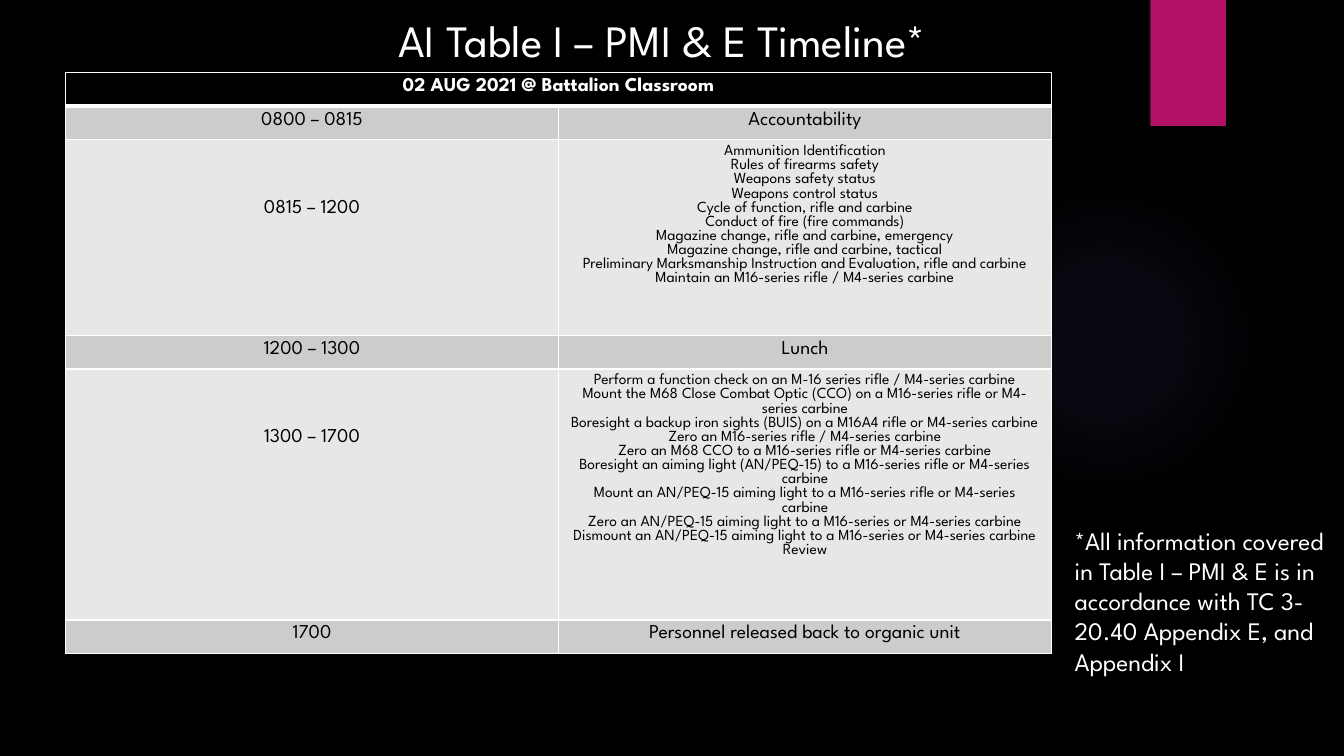
from lxml.etree import SubElement
from pptx import Presentation
from pptx.dml.color import RGBColor
from pptx.enum.shapes import MSO_SHAPE
from pptx.enum.text import MSO_AUTO_SIZE, PP_ALIGN
from pptx.oxml import parse_xml
from pptx.oxml.ns import qn
from pptx.util import Inches, Pt

FONT = "League Spartan"
BLACK = RGBColor(0x00, 0x00, 0x00)
WHITE = RGBColor(0xFF, 0xFF, 0xFF)
PINK = RGBColor(0xB3, 0x11, 0x66)
VIOLET = RGBColor(0x9B, 0x6B, 0xF2)
DARK = RGBColor(0xCC, 0xCC, 0xCC)
LIGHT = RGBColor(0xE7, 0xE7, 0xE7)

HEADER = "02 AUG 2021 @ Battalion Classroom"
MORNING = [
    "Ammunition Identification",
    "Rules of firearms safety",
    "Weapons safety status",
    "Weapons control status",
    "Cycle of function, rifle and carbine",
    "Conduct of fire (fire commands)",
    "Magazine change, rifle and carbine, emergency",
    "Magazine change, rifle and carbine, tactical",
    "Preliminary Marksmanship Instruction and Evaluation, rifle and carbine",
    "Maintain an M16-series rifle / M4-series carbine",
]
EVENING = [
    "Perform a function check on an M-16 series rifle / M4-series carbine",
    "Mount the M68 Close Combat Optic (CCO) on a M16-series rifle or M4-series carbine",
    "Boresight a backup iron sights (BUIS) on a M16A4 rifle or M4-series carbine",
    "Zero an M16-series rifle / M4-series carbine",
    "Zero an M68 CCO to a M16-series rifle or M4-series carbine",
    "Boresight an aiming light (AN/PEQ-15) to a M16-series rifle or M4-series carbine",
    "Mount an AN/PEQ-15 aiming light to a M16-series rifle or M4-series carbine",
    "Zero an AN/PEQ-15 aiming light to a M16-series or M4-series carbine",
    "Dismount an AN/PEQ-15 aiming light to a M16-series or M4-series carbine",
    "Review",
]
# Time, tasks, row height
PLAN = [
    ("0800 – 0815", ["Accountability"], 0.33),
    ("0815 – 1200", MORNING, 1.94),
    ("1200 – 1300", ["Lunch"], 0.33),
    ("1300 – 1700", EVENING, 2.49),
    ("1700", ["Personnel released back to organic unit"], 0.33),
]


def write(frame, lines, size, color, align, bold=False):
    look = {"name": FONT, "size": Pt(size), "bold": bold}
    for i, line in enumerate(lines):
        para = frame.paragraphs[0] if i == 0 else frame.add_paragraph()
        para.alignment = align
        run = para.add_run()
        run.text = line
        for key, value in look.items():
            setattr(run.font, key, value)
        run.font.color.rgb = color


def add_text(slide, box, text, size, align, wrap):
    shape = slide.shapes.add_textbox(*map(Inches, box))
    frame = shape.text_frame
    frame.word_wrap = wrap
    frame.auto_size = MSO_AUTO_SIZE.SHAPE_TO_FIT_TEXT
    write(frame, [text], size, WHITE, align)


def add_block(slide, kind, box, color):
    shape = slide.shapes.add_shape(kind, *map(Inches, box))
    shape.shadow.inherit = False
    shape.fill.solid()
    shape.fill.fore_color.rgb = color
    shape.line.fill.background()
    return shape


def add_glow(slide, box):
    shape = add_block(slide, MSO_SHAPE.OVAL, box, VIOLET)
    stops = "".join(
        f'<a:gs pos="{pos * 1000}"><a:srgbClr val="{VIOLET}">'
        f'<a:alpha val="{alpha * 1000}"/></a:srgbClr></a:gs>'
        for pos, alpha in [(0, 7), (36, 6), (69, 0)]
    )
    grad = parse_xml(
        '<a:gradFill xmlns:a="http://schemas.openxmlformats.org/drawingml/2006/main">'
        f'<a:gsLst>{stops}</a:gsLst><a:path path="circle">'
        '<a:fillToRect l="50000" t="50000" r="50000" b="50000"/></a:path></a:gradFill>'
    )
    props = shape.fill._xPr
    props.replace(props.find(qn("a:solidFill")), grad)


def fill_cell(cell, color, top=1, bottom=1):
    # Borders come before the fill
    props = cell._tc.get_or_add_tcPr()
    for side, width in {"L": 1, "R": 1, "T": top, "B": bottom}.items():
        line = SubElement(props, qn(f"a:ln{side}"), w=str(Pt(width)))
        paint = SubElement(line, qn("a:solidFill"))
        SubElement(paint, qn("a:srgbClr"), val=str(WHITE))
    cell.fill.solid()
    cell.fill.fore_color.rgb = color


def add_plan(slide):
    box = (0.65, 0.72, 9.78, 5.75)
    table = slide.shapes.add_table(len(PLAN) + 1, 2, *map(Inches, box)).table
    for col in table.columns:
        col.width = Inches(4.89)

    # Header across both columns
    table.rows[0].height = Inches(0.33)
    for cell in table.rows[0].cells:
        fill_cell(cell, BLACK, bottom=3)
    head = table.cell(0, 0)
    head.merge(table.cell(0, 1))
    write(head.text_frame, [HEADER], 14, WHITE, PP_ALIGN.CENTER, True)

    # Timed rows
    for i, (time, tasks, height) in enumerate(PLAN, 1):
        table.rows[i].height = Inches(height)
        many = len(tasks) > 1
        left, right = table.cell(i, 0), table.cell(i, 1)
        for cell in (left, right):
            fill_cell(cell, LIGHT if many else DARK, top=3 if i == 1 else 1)
        if many:
            left.margin_top = Inches(0.59)
        write(left.text_frame, [time], 14, BLACK, PP_ALIGN.CENTER)
        write(right.text_frame, tasks, 11 if many else 14, BLACK, PP_ALIGN.CENTER)


def main():
    deck = Presentation()
    deck.slide_width, deck.slide_height = Inches(13.33), Inches(7.5)
    slide = deck.slides.add_slide(deck.slide_layouts[6])
    back = slide.background.fill
    back.solid()
    back.fore_color.rgb = BLACK

    # Backdrop
    add_glow(slide, (9.41, 1.83, 3.08, 3.08))
    add_block(slide, MSO_SHAPE.RECTANGLE, (11.41, 0, 0.75, 1.25), PINK)

    # Title, timeline and footnote
    add_text(slide, (3.75, 0.08, 5.64, 0.64), "AI Table I – PMI & E Timeline*",
             32, PP_ALIGN.CENTER, False)
    add_plan(slide)
    note = ("*All information covered in Table I – PMI & E is in accordance "
            "with TC 3-20.40 Appendix E, and Appendix I")
    add_text(slide, (10.56, 5.16, 2.7, 1.92), note, 18, PP_ALIGN.LEFT, True)
    deck.save("out.pptx")


if __name__ == "__main__":
    main()
